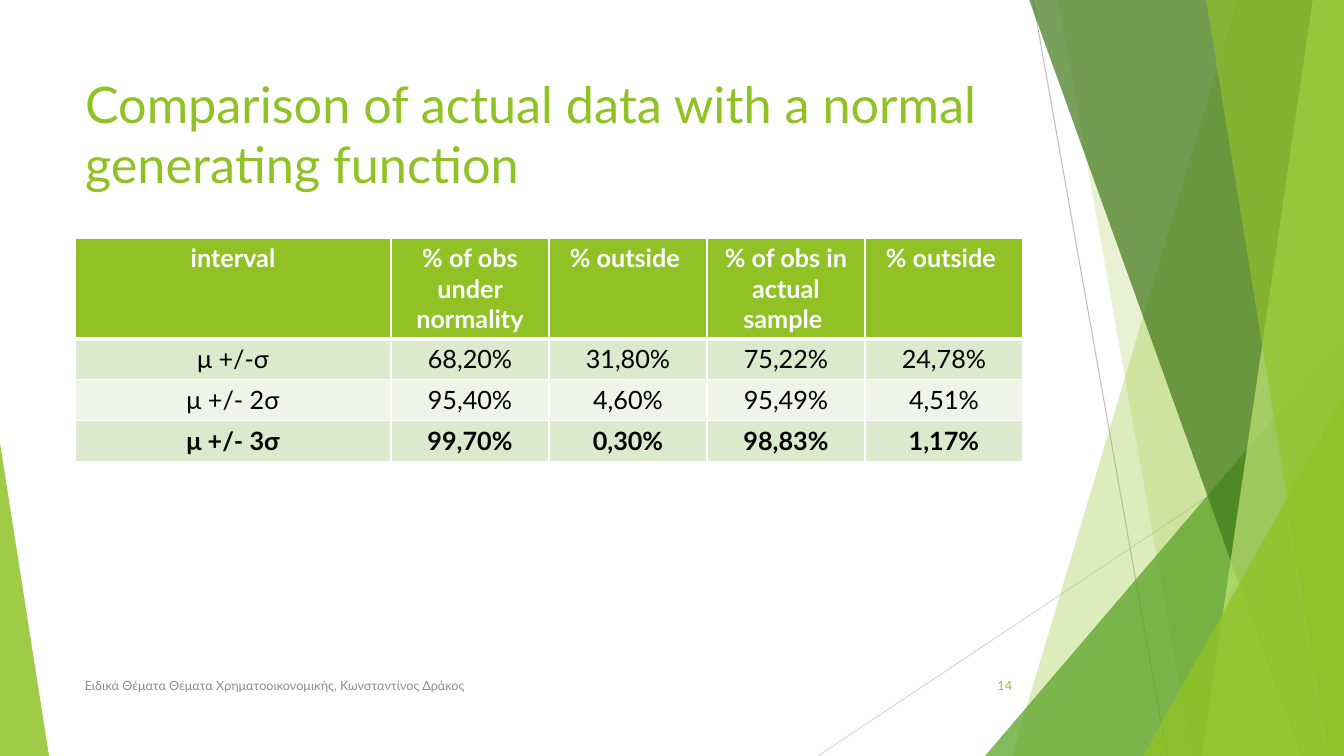
import pptx
import pptx.util
import pptx.dml.color
import pptx.enum.shapes
import pptx.enum.text
import pptx.oxml
import pptx.oxml.ns

TITLE = "Comparison of actual data with a normal generating function"
FOOTER = "Ειδικά Θέματα Θέματα Χρηματοοικονομικής, Κωνσταντίνος Δράκος"
PAGE = "14"
INTERVALS = [
    ["interval", "% of obs under normality", "% outside ", "% of obs in actual sample ", "% outside "],
    ["μ +/-σ", "68,20%", "31,80%", "75,22%", "24,78%"],
    ["μ +/- 2σ", "95,40%", "4,60%", "95,49%", "4,51%"],
    ["μ +/- 3σ", "99,70%", "0,30%", "98,83%", "1,17%"],
]
COLORS = {
    "lime": "90C226", "green": "54A021", "forest": "3F7819", "pale": "C0E474",
    "white": "FFFFFF", "black": "000000", "band": "DBE9CD", "light": "EEF4E8",
    "grey": "8C8C8C", "ray": "BFBFBF", "faint ray": "D9D9D9",
}
# fill, bold and text colour of each table row
ROW_STYLES = [("lime", True, "white"), ("band", False, "black"),
              ("light", False, "black"), ("band", True, "black")]
COLUMN_WIDTHS = [316, 158, 158, 158, 158]
ROW_HEIGHTS = [99, 41, 41, 41]

WIDTH, HEIGHT = 1344, 756
PX = 914400 / 100.8
RAYS = [((1033, 0), (1167, HEIGHT), "ray"), ((WIDTH, 406), (818, HEIGHT), "faint ray")]
# Bands reach the right edge: (top left x, bottom left x, colour, opacity %)
# Triangles stand on the bottom edge: (left, top, width, apex, colour, opacity %)
FACETS = [
    (1238, 1012, "lime", 30),
    (1058, 1192, "lime", 20),
    (985, 336, 359, 1, "green", 72),
    (1029, 1301, "forest", 70),
    (1313, 1202, "pale", 70),
    (1206, 1329, "lime", 65),
    (1143, 396, 201, 1, "lime", 80),
    (0, 443, 49, 0, "lime", 85),
]


def px(*lengths):
    return [pptx.util.Emu(round(length * PX)) for length in lengths]


def rgb(color):
    return pptx.dml.color.RGBColor.from_string(COLORS[color])


def add_ray(slide, start, end, color):
    ray = slide.shapes.add_connector(pptx.enum.shapes.MSO_CONNECTOR.STRAIGHT, *px(*start, *end))
    ray.line.color.rgb = rgb(color)
    ray.line.width = pptx.util.Pt(0.75)
    pptx.oxml.ns.qn("a:effectLst")
    ray._element.spPr.append(pptx.oxml.parse_xml(
        f'<a:effectLst {pptx.oxml.ns.nsdecls("a")}/>'))


def add_facet(slide, *geometry, color, opacity):
    if len(geometry) == 2:
        top_x, bottom_x = geometry
        outline = slide.shapes.build_freeform(top_x, -1, scale=PX)
        outline.add_line_segments([(WIDTH, -1), (WIDTH, HEIGHT), (bottom_x, HEIGHT)])
        facet = outline.convert_to_shape()
    else:
        left, top, width, apex = geometry
        facet = slide.shapes.add_shape(pptx.enum.shapes.MSO_SHAPE.ISOSCELES_TRIANGLE,
                                       *px(left, top, width, HEIGHT - top))
        facet.adjustments[0] = apex
    facet.shadow.inherit = False
    facet.line.fill.background()
    facet.fill.solid()
    facet.fill.fore_color.rgb = rgb(color)
    srgb = facet._element.spPr.find(".//" + pptx.oxml.ns.qn("a:srgbClr"))
    srgb.append(pptx.oxml.parse_xml(
        f'<a:alpha {pptx.oxml.ns.nsdecls("a")} val="{opacity * 1000}"/>'))


def write(frame, text, size, color, align, bold=False):
    frame.text = text
    paragraph = frame.paragraphs[0]
    paragraph.alignment = align
    paragraph.font.name = "Lato"
    paragraph.font.size = pptx.util.Pt(size)
    paragraph.font.bold = bold
    paragraph.font.color.rgb = rgb(color)


def set_borders(cell, bottom):
    """Draw white borders, 1 pt apart from the bottom one."""
    for place, (side, points) in enumerate([("L", 1), ("R", 1), ("T", 1), ("B", bottom)]):
        cell._tc.get_or_add_tcPr().insert(place, pptx.oxml.parse_xml(
            f'<a:ln{side} {pptx.oxml.ns.nsdecls("a")} w="{points * 12700}"><a:solidFill>'
            f'<a:srgbClr val="{COLORS["white"]}"/></a:solidFill></a:ln{side}>'))


def add_intervals(slide):
    table = slide.shapes.add_table(
        len(INTERVALS), len(COLUMN_WIDTHS),
        *px(75, 238, sum(COLUMN_WIDTHS), sum(ROW_HEIGHTS))).table
    for column, width in zip(table.columns, px(*COLUMN_WIDTHS)):
        column.width = width
    for row, height in zip(table.rows, px(*ROW_HEIGHTS)):
        row.height = height
    for r, (values, (fill, bold, color)) in enumerate(zip(INTERVALS, ROW_STYLES)):
        for c, value in enumerate(values):
            cell = table.cell(r, c)
            write(cell.text_frame, value, 18, color, pptx.enum.text.PP_ALIGN.CENTER, bold)
            cell.fill.solid()
            cell.fill.fore_color.rgb = rgb(fill)
            set_borders(cell, bottom=3 if r == 0 else 1)


def add_footer(slide, left, width, text, color, align):
    frame = slide.shapes.add_textbox(*px(left, 666, width, 40)).text_frame
    frame.word_wrap = True
    frame.vertical_anchor = pptx.enum.text.MSO_ANCHOR.MIDDLE
    write(frame, text, 9, color, align)


def main():
    deck = pptx.Presentation()
    deck.slide_width, deck.slide_height = px(WIDTH, HEIGHT)
    slide = deck.slides.add_slide(deck.slide_layouts[5])
    left, right = pptx.enum.text.PP_ALIGN.LEFT, pptx.enum.text.PP_ALIGN.RIGHT

    for ray in RAYS:
        add_ray(slide, *ray)
    for *geometry, color, opacity in FACETS:
        add_facet(slide, *geometry, color=color, opacity=opacity)

    title = slide.shapes.title
    title.left, title.top, title.width, title.height = px(75, 68, 947, 145)
    title.text_frame.vertical_anchor = pptx.enum.text.MSO_ANCHOR.TOP
    title.text_frame.auto_size = pptx.enum.text.MSO_AUTO_SIZE.NONE
    write(title.text_frame, TITLE, 36, "lime", left)
    slide.shapes._spTree.append(title._element)  # in front of the facets

    add_intervals(slide)
    add_footer(slide, 75, 695, FOOTER, "grey", left)
    add_footer(slide, 947, 75, PAGE, "lime", right)
    deck.save("out.pptx")


if __name__ == "__main__":
    main()
